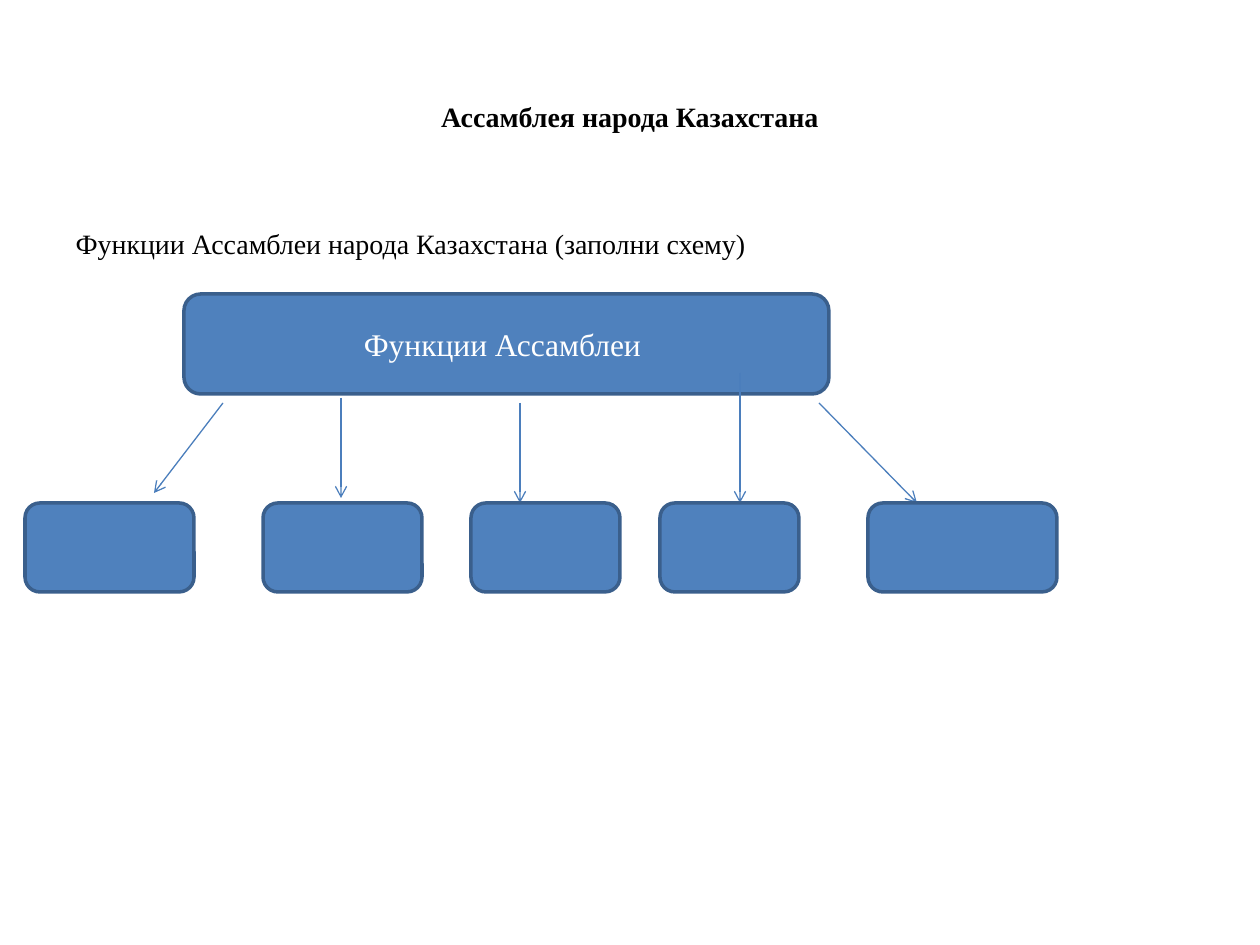
"""Build the slide with the blank scheme of the Assembly's functions."""
import pptx
import pptx.dml.color
import pptx.enum.shapes
import pptx.enum.text
import pptx.oxml.ns
import pptx.util
from lxml import etree

TITLE = "Ассамблея народа Казахстана"
TASK = "Функции Ассамблеи народа Казахстана (заполни схему)"
HEADING = "Функции Ассамблеи "
TITLE_AREA = (63, 38, 1134, 157)
BODY_AREA = (63, 220, 1134, 624)
HEADING_AREA = (184, 294, 645, 100)
ANSWER_TOP, ANSWER_HEIGHT = 503, 89
ANSWERS = [(25, 169), (263, 159), (471, 149), (660, 139), (868, 189)]
ARROWS = [
    (223, 403, 154, 493),
    (341, 398, 341, 498),
    (520, 403, 520, 503),
    (740, 373, 740, 503),
    (819, 403, 917, 503),
]

FONT = "Times New Roman"
BLACK = pptx.dml.color.RGBColor(0x00, 0x00, 0x00)
WHITE = pptx.dml.color.RGBColor(0xFF, 0xFF, 0xFF)
BLUE = pptx.dml.color.RGBColor(0x4F, 0x81, 0xBD)
BORDER = pptx.dml.color.RGBColor(0x3A, 0x5F, 0x8C)
ARROW = pptx.dml.color.RGBColor(0x4B, 0x7E, 0xBC)
CENTER = pptx.enum.text.PP_ALIGN.CENTER
LEFT = pptx.enum.text.PP_ALIGN.LEFT
PX_PER_INCH = 126


def px(*lengths):
    return [round(length * pptx.util.Inches(1) / PX_PER_INCH) for length in lengths]


def write(shape, text, size=16, color=BLACK, bold=False, align=LEFT):
    para = shape.text_frame.paragraphs[0]
    para.alignment = align
    span = para.add_run()
    span.text = text
    span.font.name = FONT
    span.font.size = pptx.util.Pt(size)
    span.font.bold = bold
    span.font.color.rgb = color
    return para


def place(shape, area):
    shape.left, shape.top, shape.width, shape.height = px(*area)


def add_box(slide, area):
    kind = pptx.enum.shapes.MSO_SHAPE.ROUNDED_RECTANGLE
    box = slide.shapes.add_shape(kind, *px(*area))
    box.shadow.inherit = False
    box.fill.solid()
    box.fill.fore_color.rgb = BLUE
    box.line.color.rgb = BORDER
    box.line.width = pptx.util.Pt(2)
    return box


def add_arrow(slide, ends):
    kind = pptx.enum.shapes.MSO_CONNECTOR.STRAIGHT
    arrow = slide.shapes.add_connector(kind, *px(*ends))
    arrow.line.color.rgb = ARROW
    arrow.line.width = pptx.util.Pt(0.75)
    qn = pptx.oxml.ns.qn
    etree.SubElement(arrow.line._get_or_add_ln(), qn("a:tailEnd"), type="arrow")
    etree.SubElement(arrow._element.spPr, qn("a:effectLst"))


def main():
    deck = pptx.Presentation()
    deck.slide_width, deck.slide_height = px(1260, 945)
    slide = deck.slides.add_slide(deck.slide_layouts[1])

    title, body = slide.placeholders
    place(title, TITLE_AREA)
    title.text_frame.vertical_anchor = pptx.enum.text.MSO_ANCHOR.MIDDLE
    write(title, TITLE, bold=True, align=CENTER)

    place(body, BODY_AREA)
    properties = write(body, TASK)._p.get_or_add_pPr()
    properties.set("marL", "0")
    properties.set("indent", "0")
    etree.SubElement(properties, pptx.oxml.ns.qn("a:buNone"))

    heading = add_box(slide, HEADING_AREA)
    heading.text_frame.vertical_anchor = pptx.enum.text.MSO_ANCHOR.MIDDLE
    write(heading, HEADING, size=18, color=WHITE, align=CENTER)
    for ends in ARROWS:
        add_arrow(slide, ends)
    for left, width in ANSWERS:
        add_box(slide, (left, ANSWER_TOP, width, ANSWER_HEIGHT))

    deck.save("out.pptx")


if __name__ == "__main__":
    main()
